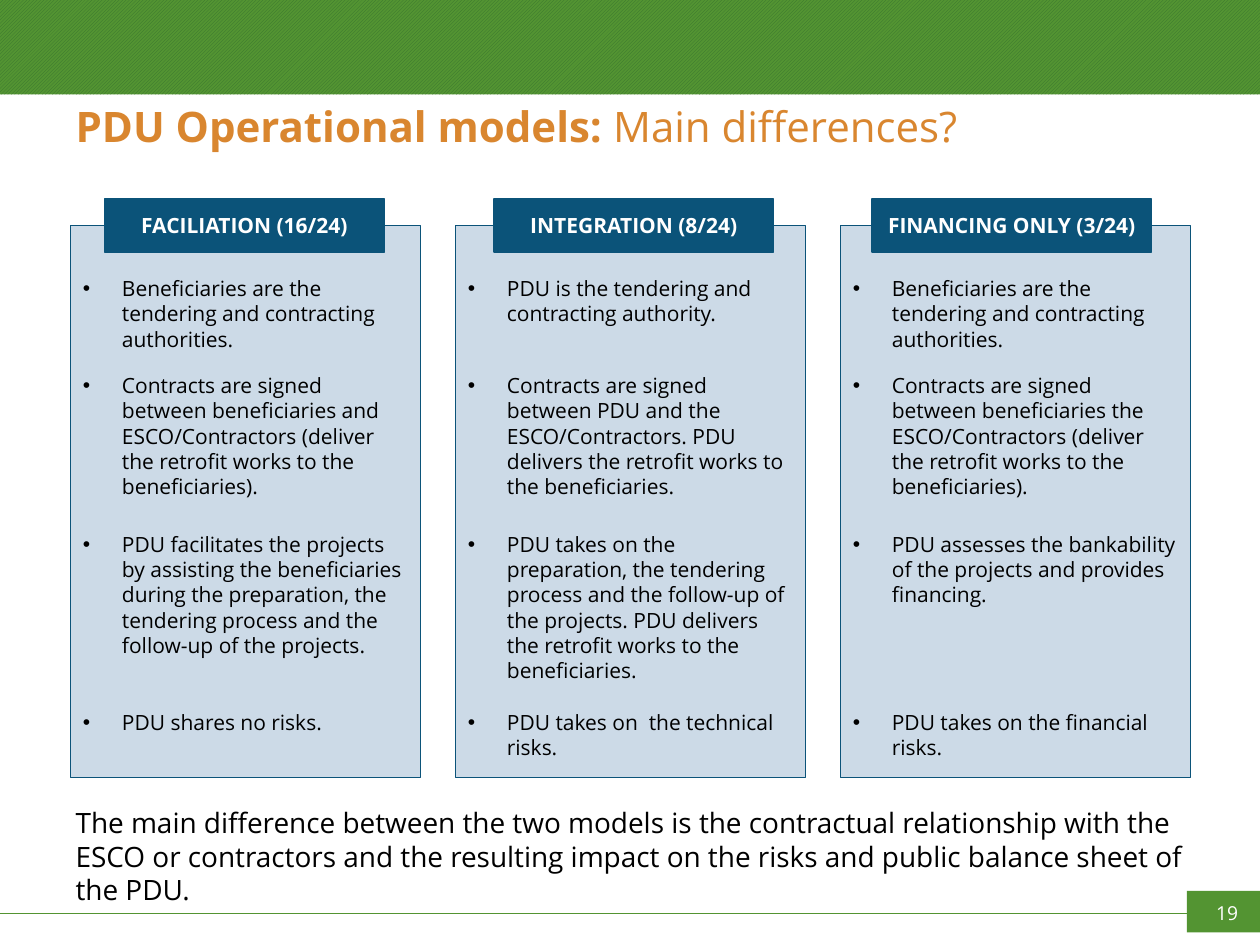
from lxml import etree
from pptx import Presentation
from pptx.dml.color import RGBColor
from pptx.enum import dml, shapes, text
from pptx.oxml.ns import qn
from pptx.util import Inches, Pt

FONT = "Open Sans"
GREEN, ORANGE, NAVY, PALE = "539432", "D9862F", "0B5379", "CCDAE7"
BLACK, WHITE = "000000", "FFFFFF"

COLUMN_LEFT, COLUMN_PITCH = 0.56, 3.055
POINT_TOPS = [2.14, 2.91, 4.17, 5.58]

# Heading, left edge of the heading, points
MODELS = [
    ("FACILIATION (16/24)", 0.83, [
        "Beneficiaries are the tendering and contracting authorities.",
        "Contracts are signed between beneficiaries and ESCO/Contractors "
        "(deliver the retrofit works to the beneficiaries).",
        "PDU facilitates the projects by assisting the beneficiaries during the "
        "preparation, the tendering process and the follow-up of the projects.",
        "PDU shares no risks.",
    ]),
    ("INTEGRATION (8/24)", 3.92, [
        "PDU is the tendering and contracting authority.",
        "Contracts are signed between PDU and the ESCO/Contractors. "
        "PDU delivers the retrofit works to the beneficiaries.",
        "PDU takes on the preparation, the tendering process and the follow-up "
        "of the projects. PDU delivers the retrofit works to the beneficiaries.",
        "PDU takes on  the technical risks.",
    ]),
    ("FINANCING ONLY (3/24)", 6.92, [
        "Beneficiaries are the tendering and contracting authorities.",
        "Contracts are signed between beneficiaries the ESCO/Contractors "
        "(deliver the retrofit works to the beneficiaries).",
        "PDU assesses the bankability of the projects and provides financing.",
        "PDU takes on the financial risks.",
    ]),
]


def color(value):
    return RGBColor.from_string(value)


def place(shape, box):
    shape.left, shape.top, shape.width, shape.height = map(Inches, box)


def add_box(slide, box, fill, line=None):
    rect = slide.shapes.add_shape(shapes.MSO_SHAPE.RECTANGLE, *map(Inches, box))
    rect.shadow.inherit = False
    rect.fill.solid()
    rect.fill.fore_color.rgb = color(fill)
    if line:
        rect.line.color.rgb = color(line)
        rect.line.width = Pt(0.75)
    else:
        rect.line.fill.background()
    return rect


def add_run(paragraph, words, size, hue, bold=False):
    run = paragraph.add_run()
    run.text = words
    run.font.name = FONT
    run.font.size = Pt(size)
    run.font.bold = bold
    run.font.color.rgb = color(hue)


def set_bullet(paragraph, indent, char=None):
    props = paragraph._p.get_or_add_pPr()
    props.set("marL", str(Inches(indent)))
    props.set("indent", str(-Inches(indent)))
    if char:
        etree.SubElement(props, qn("a:buFont")).set("typeface", "Arial")
        etree.SubElement(props, qn("a:buChar")).set("char", char)
    else:
        etree.SubElement(props, qn("a:buNone"))


def add_text_box(slide, box):
    frame = slide.shapes.add_textbox(*map(Inches, box)).text_frame
    frame.word_wrap = True
    return frame


def add_frame(slide, page):
    # Striped band at the top
    band = add_box(slide, (0, 0, 10, 0.75), GREEN)
    band.fill.patterned()
    band.fill.pattern = dml.MSO_PATTERN.LIGHT_UPWARD_DIAGONAL
    band.fill.fore_color.rgb = color("35702E")
    band.fill.back_color.rgb = color(GREEN)

    # Footer rule
    rule = slide.shapes.add_connector(
        shapes.MSO_CONNECTOR.STRAIGHT, Inches(10), Inches(7.25), 0, Inches(7.25))
    rule.line.color.rgb = color(GREEN)
    rule.line.width = Pt(0.75)
    etree.SubElement(rule._element.spPr, qn("a:effectLst"))

    # Page number
    add_box(slide, (9.42, 7.07, 0.58, 0.33), GREEN)
    number = add_text_box(slide, (9.45, 7.1, 0.58, 0.32)).paragraphs[0]
    number.alignment = text.PP_ALIGN.CENTER
    add_run(number, page, 11, WHITE)


def fill_title(title, box):
    place(title, box)
    frame = title.text_frame
    frame.auto_size = text.MSO_AUTO_SIZE.NONE
    frame.vertical_anchor = text.MSO_ANCHOR.TOP
    heading = frame.paragraphs[0]
    heading.alignment = text.PP_ALIGN.LEFT
    add_run(heading, "PDU Operational models: ", 24, ORANGE, bold=True)
    add_run(heading, "Main differences?", 24, ORANGE)


def fill_conclusion(body, box):
    place(body, box)
    frame = body.text_frame
    frame.auto_size = text.MSO_AUTO_SIZE.NONE
    frame.vertical_anchor = text.MSO_ANCHOR.MIDDLE
    conclusion = frame.paragraphs[0]
    conclusion.space_before = Pt(0)
    set_bullet(conclusion, 0)
    add_run(conclusion,
            "The main difference between the two models is the contractual "
            "relationship with the ESCO or contractors and the resulting impact "
            "on the risks and public balance sheet of the PDU.", 16, BLACK)


def add_model(slide, box, heading, heading_left, points):
    left, top, width, height = box
    add_box(slide, box, PALE, NAVY)

    # Heading across the top edge
    label = add_box(slide, (heading_left, top - 0.21, 2.22, 0.42), NAVY, NAVY)
    frame = label.text_frame
    frame.word_wrap = True
    frame.vertical_anchor = text.MSO_ANCHOR.MIDDLE
    frame.paragraphs[0].alignment = text.PP_ALIGN.CENTER
    add_run(frame.paragraphs[0], heading, 12, WHITE, bold=True)

    # Points, level with those of the other models
    for point_top, point in zip(POINT_TOPS, points):
        frame = add_text_box(slide, (left, point_top, width, 0.5))
        frame.auto_size = text.MSO_AUTO_SIZE.SHAPE_TO_FIT_TEXT
        set_bullet(frame.paragraphs[0], 0.31, "•")
        add_run(frame.paragraphs[0], point, 12, BLACK)


def main():
    deck = Presentation()
    deck.slide_width, deck.slide_height = Inches(10), Inches(7.5)
    slide = deck.slides.add_slide(deck.slide_layouts[1])
    slide.background.fill.solid()
    slide.background.fill.fore_color.rgb = color(WHITE)

    add_frame(slide, "19")
    fill_title(slide.shapes.title, (0.5, 0.75, 9, 0.75))
    for column, model in enumerate(MODELS):
        left = COLUMN_LEFT + column * COLUMN_PITCH
        add_model(slide, (left, 1.79, 2.78, 4.38), *model)
    fill_conclusion(slide.placeholders[1], (0.5, 6.42, 9, 0.75))
    deck.save("out.pptx")


if __name__ == "__main__":
    main()
